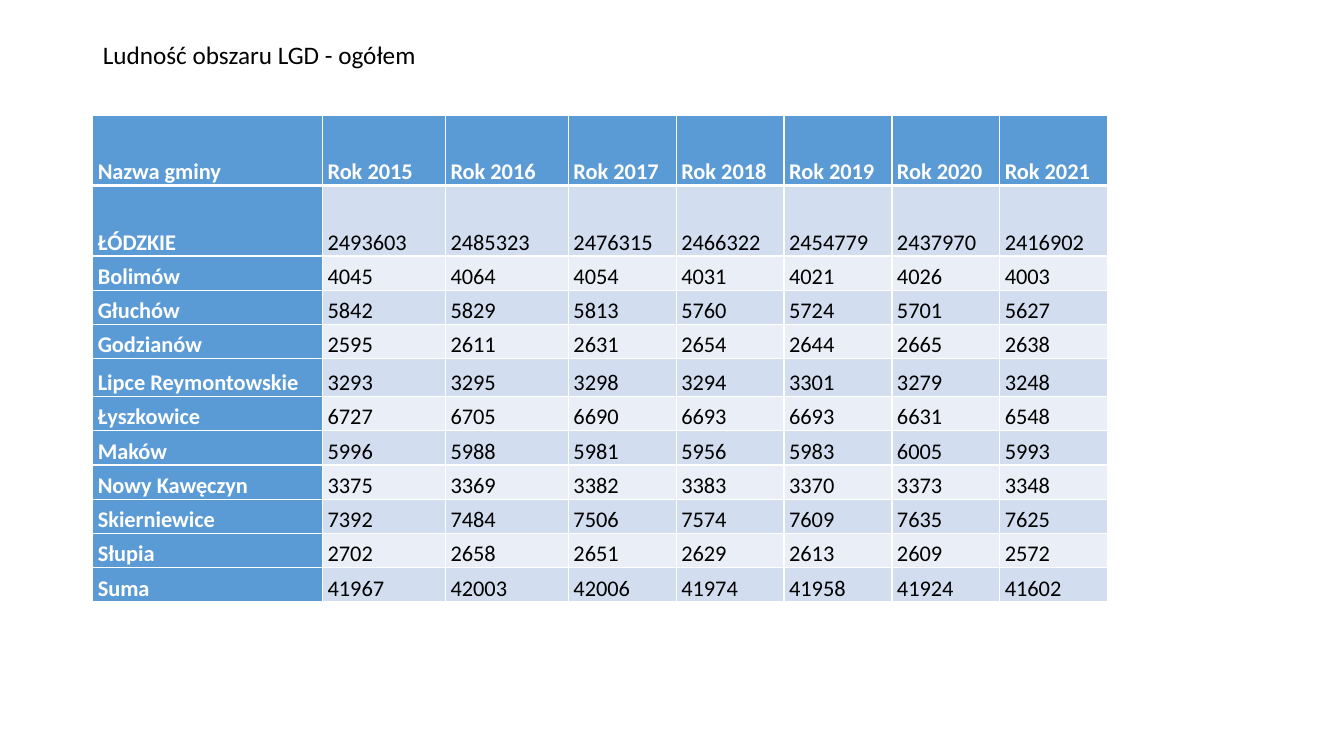
import dataclasses

import lxml.etree
import pptx
import pptx.dml.color
import pptx.enum.text
import pptx.oxml.ns
import pptx.table
import pptx.util


@dataclasses.dataclass(frozen=True)
class Theme:
    font: str = "Calibri"
    title_size: float = 18
    table_size: float = 16
    text: str = "000000"
    inverse: str = "FFFFFF"
    header: str = "5B9BD5"
    dark_band: str = "D2DEEF"
    light_band: str = "EAEFF7"
    thin_line: float = 1
    thick_line: float = 3


@dataclasses.dataclass(frozen=True)
class Commune:
    name: str
    population: tuple[int, ...]
    height: float = 24.48


THEME = Theme()
YEARS = range(2015, 2022)
HEADER_HEIGHT = 50.4
COLUMN_WIDTHS = [164.16] + [87.84] * 2 + [77.04] * 5
COMMUNES = [
    Commune("ŁÓDZKIE", (2493603, 2485323, 2476315, 2466322, 2454779, 2437970, 2416902), HEADER_HEIGHT),
    Commune("Bolimów", (4045, 4064, 4054, 4031, 4021, 4026, 4003)),
    Commune("Głuchów", (5842, 5829, 5813, 5760, 5724, 5701, 5627)),
    Commune("Godzianów", (2595, 2611, 2631, 2654, 2644, 2665, 2638)),
    Commune("Lipce Reymontowskie", (3293, 3295, 3298, 3294, 3301, 3279, 3248), 27),
    Commune("Łyszkowice", (6727, 6705, 6690, 6693, 6693, 6631, 6548)),
    Commune("Maków", (5996, 5988, 5981, 5956, 5983, 6005, 5993)),
    Commune("Nowy Kawęczyn", (3375, 3369, 3382, 3383, 3370, 3373, 3348)),
    Commune("Skierniewice", (7392, 7484, 7506, 7574, 7609, 7635, 7625)),
    Commune("Słupia", (2702, 2658, 2651, 2629, 2613, 2609, 2572)),
    Commune("Suma", (41967, 42003, 42006, 41974, 41958, 41924, 41602)),
]


def set_font(font, size: float, color: str, bold: bool = False) -> None:
    font.name = THEME.font
    font.size = pptx.util.Pt(size)
    font.bold = bold
    font.color.rgb = pptx.dml.color.RGBColor.from_string(color)


def add_title(slide, text: str) -> None:
    title = slide.shapes.title
    title.left, title.top = pptx.util.Pt(66.24), pptx.util.Pt(24.48)
    title.width, title.height = pptx.util.Pt(241.2), pptx.util.Pt(28.8)
    frame = title.text_frame
    frame.text = text
    frame.word_wrap = False
    frame.auto_size = pptx.enum.text.MSO_AUTO_SIZE.SHAPE_TO_FIT_TEXT
    frame.vertical_anchor = pptx.enum.text.MSO_ANCHOR.TOP
    paragraph = frame.paragraphs[0]
    paragraph.alignment = pptx.enum.text.PP_ALIGN.LEFT
    set_font(paragraph.font, THEME.title_size, THEME.text)


def set_borders(cell, widths: dict[str, float]) -> None:
    """Draw the borders; keys follow the schema order L, R, T, B."""
    properties = cell._tc.get_or_add_tcPr()
    for side, width in widths.items():
        line = lxml.etree.SubElement(
            properties, pptx.oxml.ns.qn(f"a:ln{side}"), w=str(pptx.util.Pt(width)))
        fill = lxml.etree.SubElement(line, pptx.oxml.ns.qn("a:solidFill"))
        lxml.etree.SubElement(fill, pptx.oxml.ns.qn("a:srgbClr"), val=THEME.inverse)


def fill_cell(cell, text: str, row: int, column: int) -> None:
    is_heading = row == 0 or column == 0
    band = THEME.dark_band if row % 2 else THEME.light_band
    thin, thick = THEME.thin_line, THEME.thick_line
    set_borders(cell, {"L": thin, "R": thin,
                       "T": thick if row == 1 else thin,
                       "B": thick if row == 0 else thin})
    cell.fill.solid()
    cell.fill.fore_color.rgb = pptx.dml.color.RGBColor.from_string(
        THEME.header if is_heading else band)
    cell.margin_left = cell.margin_right = pptx.util.Pt(3.6)
    cell.margin_top = cell.margin_bottom = 0
    cell.vertical_anchor = pptx.enum.text.MSO_ANCHOR.BOTTOM
    cell.text = text
    paragraph = cell.text_frame.paragraphs[0]
    paragraph.alignment = pptx.enum.text.PP_ALIGN.JUSTIFY
    paragraph.line_spacing = 1.2
    paragraph.space_before = paragraph.space_after = pptx.util.Pt(6)
    set_font(paragraph.font, THEME.table_size,
             THEME.inverse if is_heading else THEME.text, is_heading)


def add_population_table(slide) -> None:
    rows = [["Nazwa gminy", *(f"Rok {year}" for year in YEARS)]]
    rows += [[commune.name, *map(str, commune.population)] for commune in COMMUNES]
    heights = [HEADER_HEIGHT] + [commune.height for commune in COMMUNES]
    table = slide.shapes.add_table(
        len(rows), len(COLUMN_WIDTHS), pptx.util.Pt(66.24), pptx.util.Pt(82.08),
        pptx.util.Pt(sum(COLUMN_WIDTHS)), pptx.util.Pt(sum(heights))).table
    table.first_col = True
    for column, width in zip(table.columns, COLUMN_WIDTHS):
        column.width = pptx.util.Pt(width)
    for row, height in zip(table.rows, heights):
        row.height = pptx.util.Pt(height)
    for row_index, texts in enumerate(rows):
        for column_index, text in enumerate(texts):
            fill_cell(table.cell(row_index, column_index), text, row_index, column_index)


def main() -> None:
    presentation = pptx.Presentation()
    presentation.slide_width = pptx.util.Pt(960)
    presentation.slide_height = pptx.util.Pt(540)
    # Title Only layout
    slide = presentation.slides.add_slide(presentation.slide_layouts[5])
    add_title(slide, "Ludność obszaru LGD - ogółem")
    # Population by commune and year
    add_population_table(slide)
    presentation.save("out.pptx")


if __name__ == "__main__":
    main()
